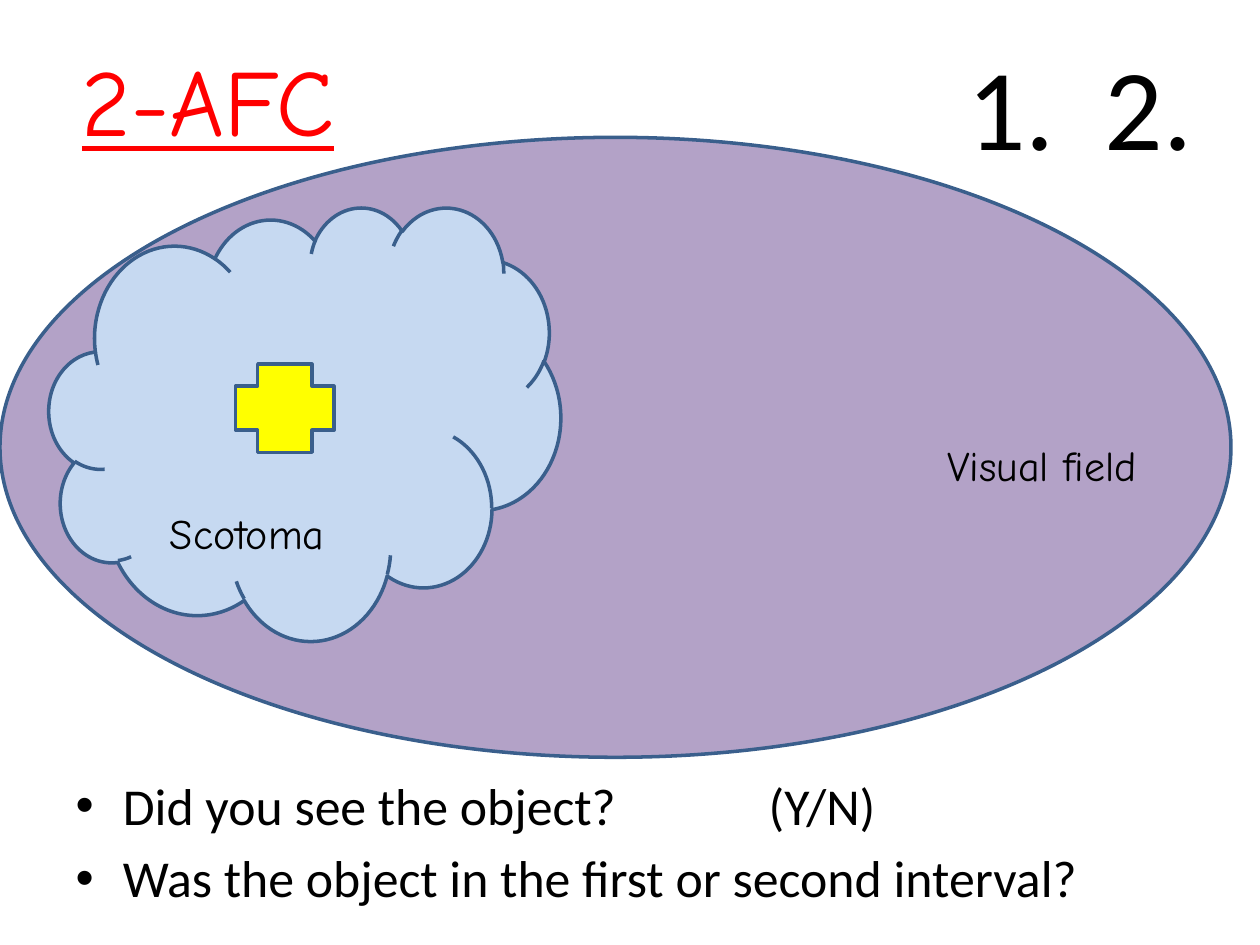
from pptx import Presentation
from pptx.dml.color import RGBColor
from pptx.enum.shapes import MSO_SHAPE
from pptx.enum.text import MSO_ANCHOR, MSO_AUTO_SIZE, PP_ALIGN
from pptx.util import Inches, Pt

OUTLINE = "3A5F8C"
BLACK = "000000"


def rgb(value):
    return RGBColor.from_string(value)


def place(sp, left, top, width, height):
    sp.left, sp.top = Inches(left), Inches(top)
    sp.width, sp.height = Inches(width), Inches(height)


def format_runs(tf, size, font, color, underline=None):
    for p in tf.paragraphs:
        for r in p.runs:
            r.font.size = Pt(size)
            r.font.name = font
            r.font.color.rgb = rgb(color)
            r.font.underline = underline


def add_outlined_shape(s, kind, box, fill):
    sp = s.shapes.add_shape(kind, *map(Inches, box))
    sp.shadow.inherit = False
    sp.fill.solid()
    sp.fill.fore_color.rgb = rgb(fill)
    sp.line.color.rgb = rgb(OUTLINE)
    sp.line.width = Pt(2)
    return sp


def add_label(s, text, box, size, font):
    tf = s.shapes.add_textbox(*map(Inches, box)).text_frame
    tf.word_wrap = True
    tf.auto_size = MSO_AUTO_SIZE.SHAPE_TO_FIT_TEXT
    tf.text = text
    format_runs(tf, size, font, BLACK)


def fill_title(s, text):
    title = s.shapes.title
    place(title, 0.55, 0.16, 9, 1.25)
    tf = title.text_frame
    tf.text = text
    tf.auto_size = MSO_AUTO_SIZE.NONE
    tf.vertical_anchor = MSO_ANCHOR.MIDDLE
    tf.paragraphs[0].alignment = PP_ALIGN.LEFT
    format_runs(tf, 54, "Comic Neue", "FF0000", underline=True)


def fill_questions(s, questions):
    body = s.placeholders[1]
    place(body, 0.5, 6.09, 9, 1.09)
    tf = body.text_frame
    tf.text = "\n".join(questions)
    tf.auto_size = MSO_AUTO_SIZE.NONE
    format_runs(tf, 29.6, "Calibri", BLACK)


def main():
    prs = Presentation()
    prs.slide_width, prs.slide_height = Inches(10), Inches(7.5)
    s = prs.slides.add_slide(prs.slide_layouts[1])

    fill_title(s, "2-AFC")
    fill_questions(s, ["Did you see the object?\t\t\t(Y/N)",
                       "Was the object in the first or second interval?"])

    field = add_outlined_shape(s, MSO_SHAPE.OVAL, (0, 1.09, 9.77, 4.92), "B3A2C7")
    # The visual field lies behind the title
    s.shapes.title.element.addprevious(field.element)
    add_outlined_shape(s, MSO_SHAPE.CLOUD, (0.39, 1.64, 4.06, 3.44), "C6D9F1")

    add_label(s, "1.", (7.58, 0.23, 1.09, 1.21), 66, "Calibri")
    add_label(s, "2.", (8.67, 0.23, 0.94, 1.21), 66, "Calibri")
    add_label(s, "Scotoma", (1.25, 3.98, 2.5, 0.5), 24, "Comic Neue")
    add_label(s, "Visual field", (7.42, 3.44, 2.11, 0.5), 24, "Comic Neue")

    add_outlined_shape(s, MSO_SHAPE.CROSS, (1.87, 2.89, 0.78, 0.7), "FFFF00")
    prs.save("out.pptx")


if __name__ == "__main__":
    main()
